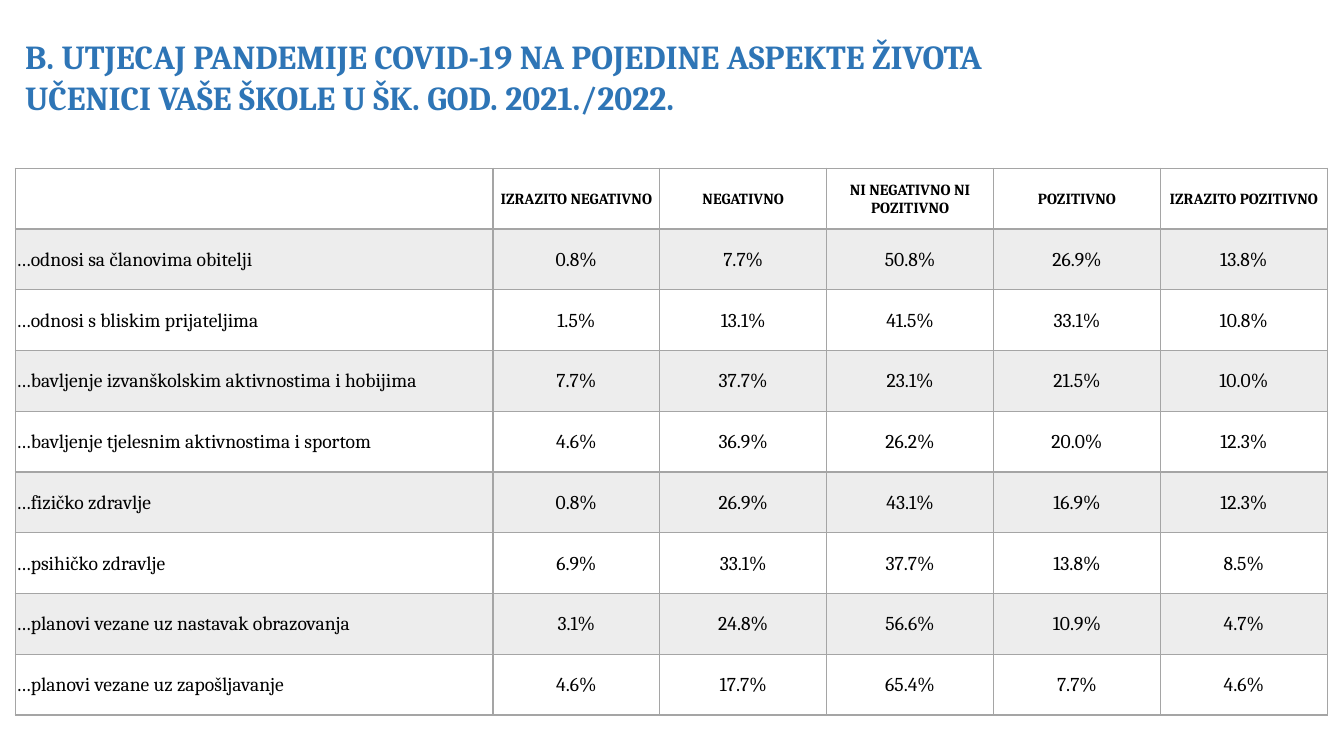
from dataclasses import dataclass

from lxml.etree import SubElement
from pptx import Presentation
from pptx.dml.color import RGBColor
from pptx.enum.text import MSO_ANCHOR, PP_ALIGN
from pptx.oxml.ns import qn
from pptx.slide import Slide
from pptx.table import _Cell
from pptx.util import Pt

FONT = "Cambria"
COLORS = {"title": "2E75B6", "text": "000000", "grid": "A5A5A5"}
BAND_OPACITY = 20
LEFT = 10.8
TABLE_TOP = 120.2
ROW_HEIGHT = 43.4
LABEL_WIDTH = 341.3
VALUE_WIDTH = 119.2

TITLE_LINES = (
    "B. UTJECAJ PANDEMIJE COVID-19 NA POJEDINE ASPEKTE ŽIVOTA",
    "UČENICI VAŠE ŠKOLE U ŠK. GOD. 2021./2022.",
)
ANSWERS = (
    "IZRAZITO NEGATIVNO",
    "NEGATIVNO",
    "NI NEGATIVNO NI POZITIVNO",
    "POZITIVNO",
    "IZRAZITO POZITIVNO",
)


@dataclass(frozen=True)
class Aspect:
    label: str
    shares: tuple[float, ...]


ASPECTS = (
    Aspect("…odnosi sa članovima obitelji", (0.8, 7.7, 50.8, 26.9, 13.8)),
    Aspect("…odnosi s bliskim prijateljima", (1.5, 13.1, 41.5, 33.1, 10.8)),
    Aspect("…bavljenje izvanškolskim aktivnostima i hobijima", (7.7, 37.7, 23.1, 21.5, 10.0)),
    Aspect("…bavljenje tjelesnim aktivnostima i sportom", (4.6, 36.9, 26.2, 20.0, 12.3)),
    Aspect("…fizičko zdravlje", (0.8, 26.9, 43.1, 16.9, 12.3)),
    Aspect("…psihičko zdravlje", (6.9, 33.1, 37.7, 13.8, 8.5)),
    Aspect("…planovi vezane uz nastavak obrazovanja", (3.1, 24.8, 56.6, 10.9, 4.7)),
    Aspect("…planovi vezane uz zapošljavanje", (4.6, 17.7, 65.4, 7.7, 4.6)),
)


def rgb(name: str) -> RGBColor:
    return RGBColor.from_string(COLORS[name])


def add_title(slide: Slide) -> None:
    sp = slide.shapes.title
    sp.left, sp.top, sp.width, sp.height = Pt(LEFT), Pt(22.3), Pt(898.6), Pt(65.5)
    tf = sp.text_frame
    tf.word_wrap = True
    tf.vertical_anchor = MSO_ANCHOR.TOP
    tf.text = "\n".join(TITLE_LINES)
    for p in tf.paragraphs:
        p.alignment = PP_ALIGN.LEFT
        p.font.name, p.font.size, p.font.bold = FONT, Pt(24), True
        p.font.color.rgb = rgb("title")


def set_borders(cell: _Cell, bottom: float) -> None:
    tc_pr = cell._tc.get_or_add_tcPr()
    for tag, width in (("a:lnL", 1), ("a:lnR", 1), ("a:lnT", 1), ("a:lnB", bottom)):
        ln = SubElement(tc_pr, qn(tag), w=str(Pt(width)))
        fill = SubElement(ln, qn("a:solidFill"))
        SubElement(fill, qn("a:srgbClr"), val=COLORS["grid"])


def set_fill(cell: _Cell, banded: bool) -> None:
    if not banded:
        cell.fill.background()
        return
    cell.fill.solid()
    cell.fill.fore_color.rgb = rgb("grid")
    color = cell._tc.tcPr.find(qn("a:solidFill")).find(qn("a:srgbClr"))
    SubElement(color, qn("a:alpha"), val=str(BAND_OPACITY * 1000))


def fill_cell(cell: _Cell, text: str, row: int, col: int) -> None:
    header = row == 0
    set_borders(cell, bottom=2 if header else 1)
    set_fill(cell, banded=row % 2 == 1)
    cell.margin_left = cell.margin_right = cell.margin_top = Pt(0.7)
    cell.margin_bottom = 0
    cell.vertical_anchor = MSO_ANCHOR.MIDDLE
    cell.text = text
    p = cell.text_frame.paragraphs[0]
    p.alignment = PP_ALIGN.CENTER if col else PP_ALIGN.LEFT
    p.font.name, p.font.size, p.font.bold = FONT, Pt(11 if header else 14), header
    p.font.color.rgb = rgb("text")


def add_shares_table(slide: Slide) -> None:
    rows = [("", *ANSWERS)]
    rows += [(a.label, *(f"{share:.1f}%" for share in a.shares)) for a in ASPECTS]
    widths = [LABEL_WIDTH] + [VALUE_WIDTH] * len(ANSWERS)
    table = slide.shapes.add_table(
        len(rows), len(widths), Pt(LEFT), Pt(TABLE_TOP),
        Pt(sum(widths)), Pt(ROW_HEIGHT * len(rows)),
    ).table
    table.first_row = table.horz_banding = False
    for column, width in zip(table.columns, widths):
        column.width = Pt(width)
    for r, texts in enumerate(rows):
        table.rows[r].height = Pt(ROW_HEIGHT)
        for c, text in enumerate(texts):
            fill_cell(table.cell(r, c), text, r, c)


def main() -> None:
    prs = Presentation()
    prs.slide_width, prs.slide_height = Pt(960), Pt(540)
    slide = prs.slides.add_slide(prs.slide_layouts.get_by_name("Title Only"))
    add_title(slide)
    add_shares_table(slide)
    prs.save("out.pptx")


if __name__ == "__main__":
    main()
